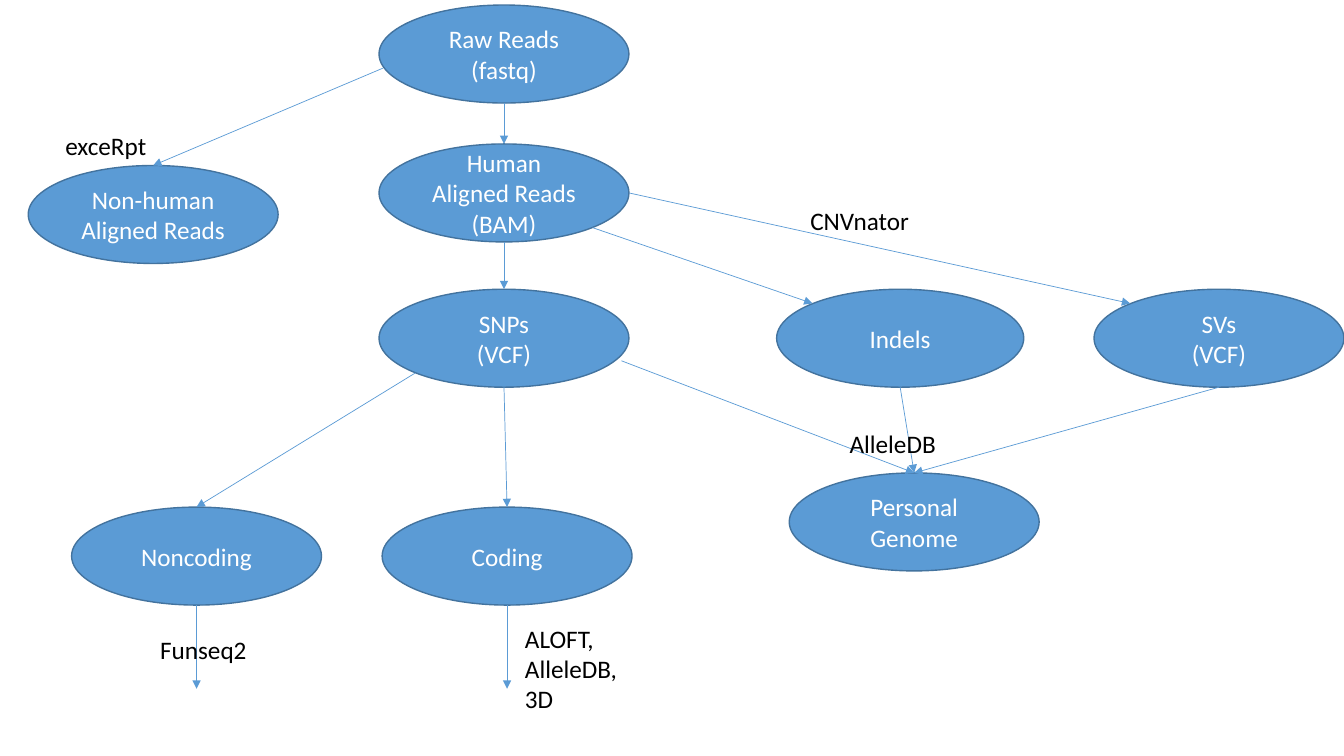
from lxml.etree import SubElement
from pptx import Presentation
from pptx.dml.color import RGBColor
from pptx.enum.shapes import MSO_CONNECTOR, MSO_SHAPE
from pptx.enum.text import MSO_ANCHOR, MSO_AUTO_SIZE, PP_ALIGN
from pptx.oxml.ns import qn
from pptx.util import Pt

NODE_WIDTH, NODE_HEIGHT = 178.5, 70
DIAGONAL = 0.71
# Points on an ellipse, as fractions of its half width and half height
TOP, BOTTOM, RIGHT = (0, -1), (0, 1), (1, 0)
UPPER_LEFT = (-DIAGONAL, -DIAGONAL)
LOWER_LEFT, LOWER_RIGHT = (-DIAGONAL, DIAGONAL), (DIAGONAL, DIAGONAL)
LEFT_BELOW_MIDDLE, RIGHT_BELOW_MIDDLE = (-0.97, 0.29), (0.94, 0.46)

VARIANT_ROW, CODING_ROW = 206.6, 362.2
# name: centre x, top, lines, width
STAGES = {
    "raw": (360, 3.6, ["Raw Reads", "(fastq)"], NODE_WIDTH),
    "human": (360, 102.8, ["Human Aligned Reads", "(BAM)"], NODE_WIDTH),
    "snps": (360, VARIANT_ROW, ["SNPs", "(VCF)"], NODE_WIDTH),
    "nonhuman": (109.4, 118.2, ["Non-human Aligned Reads"], NODE_WIDTH),
    "svs": (870.7, VARIANT_ROW, ["SVs", "(VCF)"], NODE_WIDTH),
    "genome": (653, 337.8, ["Personal Genome"], NODE_WIDTH),
    "coding": (362.2, CODING_ROW, ["Coding"], NODE_WIDTH),
    "noncoding": (140.4, CODING_ROW, ["Noncoding"], NODE_WIDTH),
    "indels": (643, VARIANT_ROW, ["Indels"], 176.5),
}
# source, leaving point, target, arriving point
FLOWS = [
    ("raw", BOTTOM, "human", TOP),
    ("human", BOTTOM, "snps", TOP),
    ("human", RIGHT, "svs", UPPER_LEFT),
    ("raw", LEFT_BELOW_MIDDLE, "nonhuman", TOP),
    ("snps", LOWER_LEFT, "noncoding", TOP),
    ("snps", BOTTOM, "coding", TOP),
    ("indels", BOTTOM, "genome", TOP),
    ("human", LOWER_RIGHT, "indels", UPPER_LEFT),
    ("svs", BOTTOM, "genome", TOP),
    ("snps", RIGHT_BELOW_MIDDLE, "genome", TOP),
]
# left, top, width, height, lines
TOOLS = [
    (599.8, 302.4, 210, 29, ["AlleleDB"]),
    (107.3, 449.3, 101.5, 29, ["Funseq2"]),
    (367.9, 441.4, 126.7, 72.7, ["ALOFT,", "AlleleDB,", "3D"]),
    (571.7, 143.3, 245.5, 29, ["CNVnator"]),
    (39.6, 89.3, 126.7, 29, ["exceRpt"]),
]


def colour(value):
    return RGBColor.from_string(value)


def point_on(node, direction):
    """Return the x and y, in points, of a place on a node's outline."""
    across, down = direction
    return (node.left.pt + node.width.pt * (1 + across) / 2,
            node.top.pt + node.height.pt * (1 + down) / 2)


class Flowchart:
    font_name, font_size = "Calibri", 18
    node_fill, node_line = "5B9BD5", "43739E"
    node_text, tool_text = "FFFFFF", "000000"

    def __init__(self, slide):
        self.slide = slide

    def add_lines(self, frame, lines, ink, align):
        frame.word_wrap = True
        for number, line in enumerate(lines):
            paragraph = frame.add_paragraph() if number else frame.paragraphs[0]
            paragraph.alignment = align
            run = paragraph.add_run()
            run.text = line
            run.font.name = self.font_name
            run.font.size = Pt(self.font_size)
            run.font.color.rgb = colour(ink)

    def node(self, centre, top, lines, width):
        ellipse = self.slide.shapes.add_shape(
            MSO_SHAPE.OVAL, Pt(centre - width / 2), Pt(top), Pt(width), Pt(NODE_HEIGHT))
        ellipse.shadow.inherit = False
        ellipse.fill.solid()
        ellipse.fill.fore_color.rgb = colour(self.node_fill)
        ellipse.line.color.rgb = colour(self.node_line)
        ellipse.line.width = Pt(1)
        ellipse.text_frame.vertical_anchor = MSO_ANCHOR.MIDDLE
        self.add_lines(ellipse.text_frame, lines, self.node_text, PP_ALIGN.CENTER)
        return ellipse

    def tool(self, left, top, width, height, lines):
        label = self.slide.shapes.add_textbox(Pt(left), Pt(top), Pt(width), Pt(height))
        self.add_lines(label.text_frame, lines, self.tool_text, PP_ALIGN.LEFT)
        label.text_frame.auto_size = MSO_AUTO_SIZE.SHAPE_TO_FIT_TEXT

    def arrow(self, start, end):
        connector = self.slide.shapes.add_connector(
            MSO_CONNECTOR.STRAIGHT, *(Pt(length) for length in (*start, *end)))
        connector.line.color.rgb = colour(self.node_fill)
        connector.line.width = Pt(0.5)
        properties = connector.element.spPr
        SubElement(properties.find(qn("a:ln")), qn("a:tailEnd"), type="triangle")
        SubElement(properties, qn("a:effectLst"))
        return connector

    def flow(self, source, leaving, target, arriving):
        connector = self.arrow(point_on(source, leaving), point_on(target, arriving))
        if arriving == TOP:
            connector.end_connect(target, 0)


def main():
    presentation = Presentation()
    presentation.slide_width, presentation.slide_height = Pt(960), Pt(540)
    chart = Flowchart(presentation.slides.add_slide(presentation.slide_layouts[6]))
    nodes = {name: chart.node(*stage) for name, stage in STAGES.items()}
    for source, leaving, target, arriving in FLOWS:
        chart.flow(nodes[source], leaving, nodes[target], arriving)
    for name in ("coding", "noncoding"):
        x, y = point_on(nodes[name], BOTTOM)
        chart.arrow((x, y), (x, y + 59.8))
    for tool in TOOLS:
        chart.tool(*tool)
    presentation.save("out.pptx")


if __name__ == "__main__":
    main()
